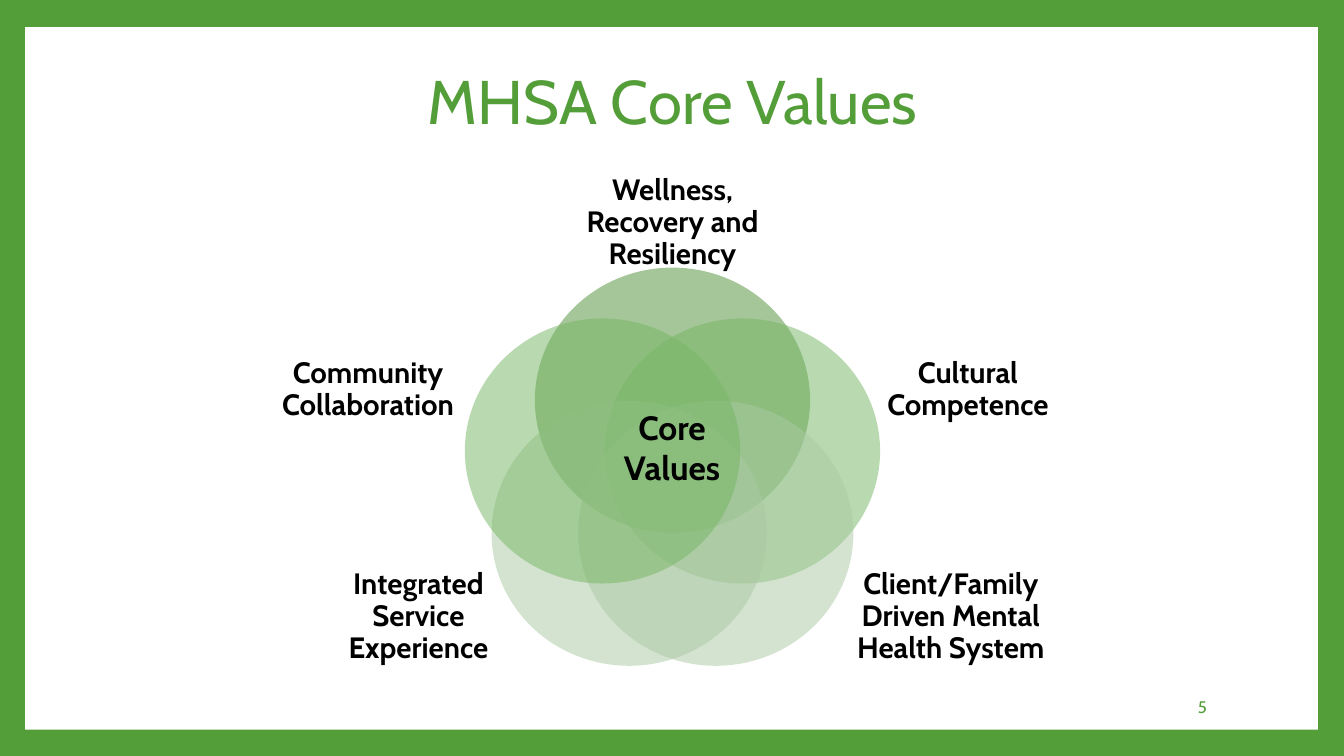
from math import cos, radians, sin

from lxml import etree
from pptx import Presentation
from pptx.dml.color import RGBColor
from pptx.enum.shapes import MSO_SHAPE as SHAPE
from pptx.enum.text import MSO_ANCHOR as ANCHOR, PP_ALIGN as ALIGN
from pptx.oxml.ns import qn
from pptx.util import Pt

PX = 9144  # 100 px to the inch
GREEN = RGBColor(0x54, 0x9E, 0x39)
DARK = RGBColor(0x4C, 0x8F, 0x34)
MID = RGBColor(0x75, 0xB6, 0x62)
PALE = RGBColor(0xAA, 0xC9, 0xA3)
WHITE = RGBColor(0xFF, 0xFF, 0xFF)
BLACK = RGBColor(0x00, 0x00, 0x00)


def add_solid(kind, x, y, w, h, color):
    sp = s.shapes.add_shape(kind, *(round(v * PX) for v in (x, y, w, h)))
    sp.shadow.inherit = False
    sp.fill.solid()
    sp.fill.fore_color.rgb = color
    sp.line.fill.background()
    return sp


def set_text(sp, text, size, color, align=ALIGN.CENTER, bold=False, spacing=None):
    tf = sp.text_frame
    tf.text = text
    tf.word_wrap = True
    tf.vertical_anchor = ANCHOR.MIDDLE
    for p in tf.paragraphs:
        p.alignment = align
        p.line_spacing = spacing
        for r in p.runs:
            r.font.name = "Cabin"
            r.font.size = Pt(size)
            r.font.bold = bold
            r.font.color.rgb = color
    return tf


prs = Presentation()
prs.slide_width, prs.slide_height = 1333 * PX, 750 * PX
s = prs.slides.add_slide(prs.slide_layouts[5])

# Green frame around a white panel
s.background.fill.solid()
s.background.fill.fore_color.rgb = GREEN
panel = add_solid(SHAPE.RECTANGLE, 25, 27, 1282, 697, WHITE)

# Title, in front of the panel
title = s.shapes.title
title.left, title.top, title.width, title.height = 127 * PX, 45 * PX, 1080 * PX, 118 * PX
set_text(title, "MHSA Core Values", 44, GREEN, spacing=0.9)
title.element.addprevious(panel.element)

# Slide number
number = s.shapes.add_textbox(1020 * PX, 681 * PX, 187 * PX, 40 * PX)
set_text(number, "5", 12, GREEN, ALIGN.RIGHT)

# Five circles, clockwise from the top, each with its label
values = [
    ("Wellness, Recovery and Resiliency", DARK, (562, 160, 210, 122)),
    ("Cultural Competence", MID, (866, 321, 188, 132)),
    ("Client/Family Driven Mental Health System", PALE, (849, 546, 188, 132)),
    ("Integrated Service Experience", PALE, (321, 546, 188, 132)),
    ("Community Collaboration", MID, (271, 321, 188, 132)),
]
CENTER_X, CENTER_Y, ORBIT = 667, 470, 73
CIRCLE_W, CIRCLE_H = 273, 263
for i, (text, color, box) in enumerate(values):
    angle = radians(72 * i - 90)
    x = CENTER_X + ORBIT * cos(angle) - CIRCLE_W / 2
    y = CENTER_Y + ORBIT * sin(angle) - CIRCLE_H / 2
    circle = add_solid(SHAPE.OVAL, x, y, CIRCLE_W, CIRCLE_H, color)
    rgb = circle.element.spPr.find(qn("a:solidFill")).find(qn("a:srgbClr"))
    etree.SubElement(rgb, qn("a:alpha")).set("val", "50000")

    label = s.shapes.add_textbox(*(v * PX for v in box))
    tf = set_text(label, text, 21, BLACK, bold=True, spacing=0.9)
    tf.margin_left = tf.margin_right = tf.margin_top = tf.margin_bottom = 0

# Shared centre
core = s.shapes.add_textbox(602 * PX, 398 * PX, 129 * PX, 91 * PX)
set_text(core, "Core\nValues", 24, BLACK, bold=True)

prs.save("out.pptx")
